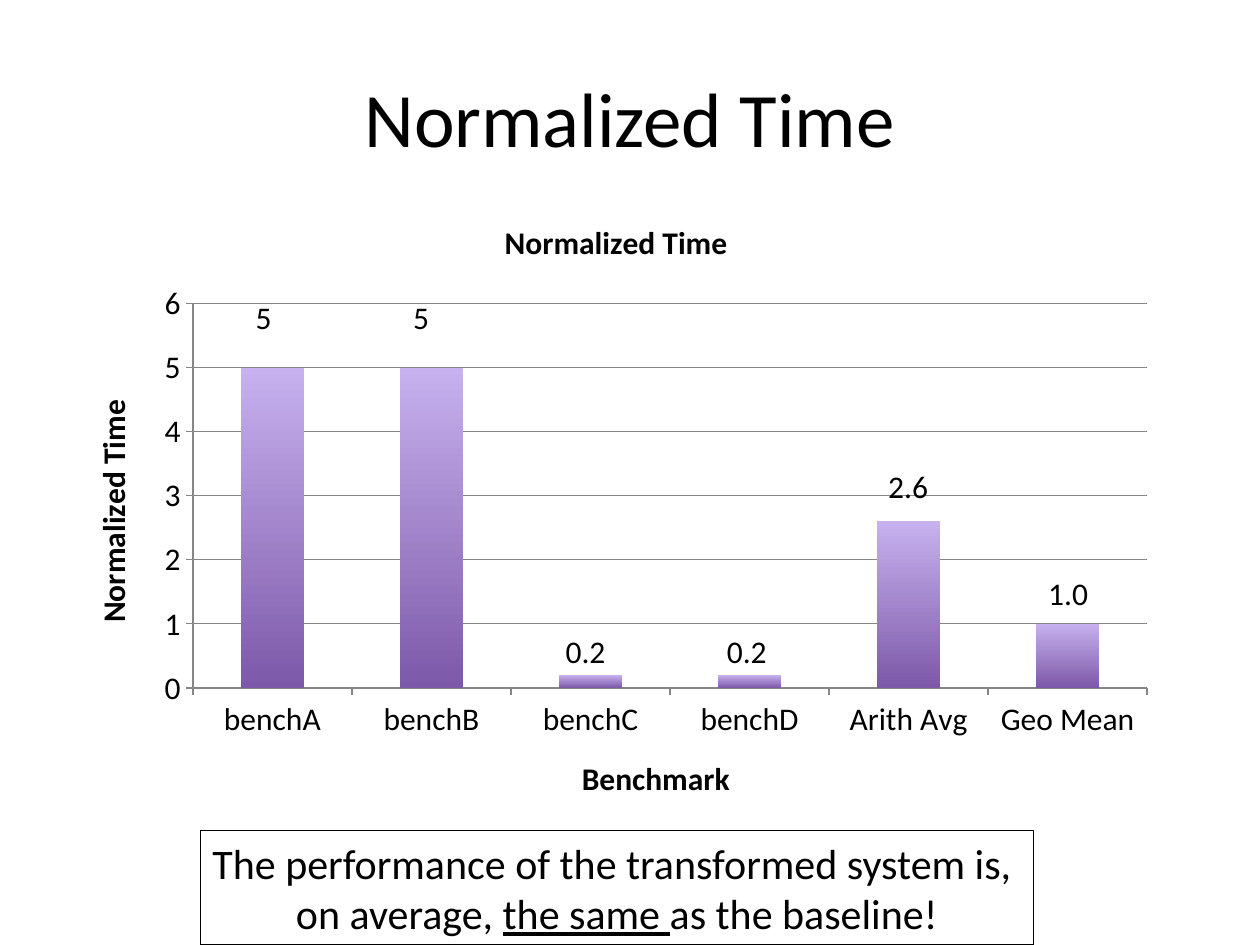
from pptx import Presentation
from pptx.chart.data import CategoryChartData
from pptx.dml.color import RGBColor
from pptx.enum.chart import XL_CHART_TYPE as ChartType, XL_TICK_MARK as TickMark
from pptx.enum.shapes import MSO_SHAPE as Shape
from pptx.enum.text import MSO_ANCHOR as Anchor, PP_ALIGN as Align
from pptx.util import Inches, Pt

FONT = "Calibri"
COLORS = {
    "text": "000000",
    "paper": "FFFFFF",
    "axis": "868686",
    "bar_top": "C7B1EE",
    "bar_bottom": "7D59A9",
}


def color(name):
    return RGBColor.from_string(COLORS[name])


def style(font, size, bold=False):
    font.name = FONT
    font.size = Pt(size)
    font.bold = bold
    font.color.rgb = color("text")


deck = Presentation()
deck.slide_width, deck.slide_height = Inches(10), Inches(7.5)
page = deck.slides.add_slide(deck.slide_layouts[6])

# Title
title = page.shapes.add_textbox(Inches(0.5), Inches(0.3), Inches(9), Inches(1.25))
title.text_frame.word_wrap = True
title.text_frame.vertical_anchor = Anchor.MIDDLE
title.text_frame.text = "Normalized Time"
title_para = title.text_frame.paragraphs[0]
title_para.alignment = Align.CENTER
style(title_para.runs[0].font, 44)

# Column chart
data = CategoryChartData()
data.categories = ["benchA", "benchB", "benchC", "benchD", "Arith Avg", "Geo Mean"]
data.add_series("Normalized Time", [5, 5, 0.2, 0.2, 2.6, 1])
chart = page.shapes.add_chart(
    ChartType.COLUMN_CLUSTERED,
    Inches(0.5), Inches(1.55), Inches(8.78), Inches(5.03), data,
).chart
style(chart.font, 18)
chart.has_legend = False
chart.has_title = True

category_axis, value_axis = chart.category_axis, chart.value_axis
for axis in (category_axis, value_axis):
    axis.has_title = True
    axis.major_tick_mark = TickMark.OUTSIDE
    axis.minor_tick_mark = TickMark.NONE
    axis.format.line.color.rgb = color("axis")
    style(axis.tick_labels.font, 18)
value_axis.minimum_scale, value_axis.maximum_scale, value_axis.major_unit = 0, 6, 1
value_axis.has_major_gridlines = True
value_axis.major_gridlines.format.line.color.rgb = color("axis")

for heading, words in (
    (chart.chart_title, "Normalized Time"),
    (category_axis.axis_title, "Benchmark"),
    (value_axis.axis_title, "Normalized Time"),
):
    heading.text_frame.text = words
    style(heading.text_frame.paragraphs[0].runs[0].font, 18, bold=True)

plot = chart.plots[0]
plot.gap_width = 150
plot.vary_by_categories = False
bar_fill = plot.series[0].format.fill
bar_fill.gradient()
bar_fill.gradient_angle = 270
for stop, name in zip(bar_fill.gradient_stops, ("bar_top", "bar_bottom")):
    stop.color.rgb = color(name)

# Conclusion
conclusion = page.shapes.add_shape(
    Shape.RECTANGLE, Inches(1.59), Inches(6.59), Inches(6.61), Inches(0.91))
conclusion.shadow.inherit = False
conclusion.fill.solid()
conclusion.fill.fore_color.rgb = color("paper")
conclusion.line.color.rgb = color("text")
conclusion.line.width = Pt(0.75)
frame = conclusion.text_frame
frame.word_wrap = False
frame.text = "The performance of the transformed system is, "
second_para = frame.add_paragraph()
for words in ("on average, ", "the same ", "as the baseline!"):
    second_para.add_run().text = words
for para in frame.paragraphs:
    para.alignment = Align.CENTER
    for span in para.runs:
        style(span.font, 24)
second_para.runs[1].font.underline = True

# Value labels above the bars
for words, left, top, width in (
    ("5", 1.93, 2.32, 0.33),
    ("5", 3.18, 2.32, 0.33),
    ("0.2", 4.39, 4.97, 0.52),
    ("0.2", 5.67, 4.97, 0.52),
    ("2.6", 6.95, 3.66, 0.52),
    ("1.0", 8.22, 4.51, 0.52),
):
    label = page.shapes.add_textbox(Inches(left), Inches(top), Inches(width), Inches(0.4))
    label.text_frame.word_wrap = False
    label.text_frame.text = words
    style(label.text_frame.paragraphs[0].runs[0].font, 18)

deck.save("out.pptx")
